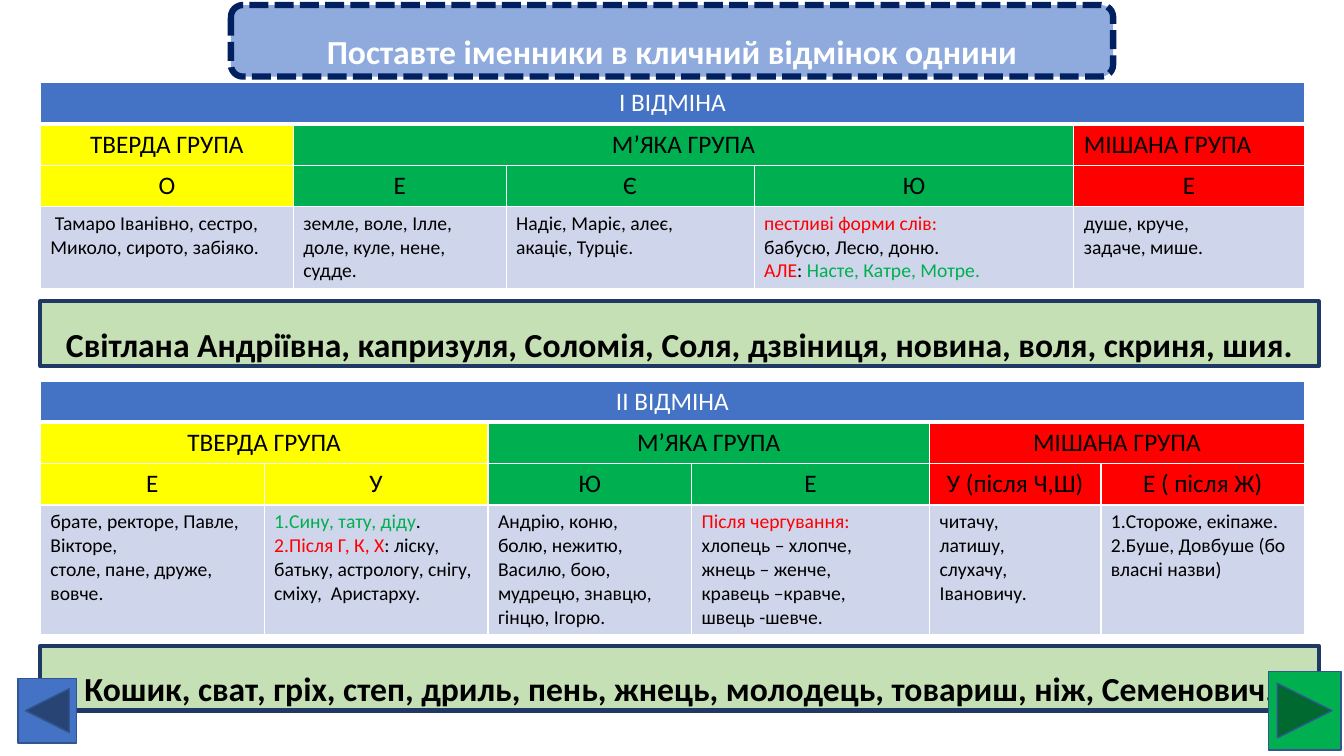
from dataclasses import dataclass

import lxml.etree
import pptx
import pptx.dml.color
import pptx.enum.dml
import pptx.enum.shapes
import pptx.enum.text
import pptx.oxml.ns
import pptx.util

Inches = pptx.util.Inches
Pt = pptx.util.Pt
SHAPE = pptx.enum.shapes.MSO_SHAPE
ALIGN = pptx.enum.text.PP_ALIGN
ANCHOR = pptx.enum.text.MSO_ANCHOR
DASH = pptx.enum.dml.MSO_LINE


@dataclass(frozen=True)
class Theme:
    font: str = "Calibri"
    title: int = 24
    heading: int = 18
    body: int = 14
    white: str = "FFFFFF"
    black: str = "000000"
    blue: str = "4472C4"
    yellow: str = "FFFF00"
    green: str = "00B050"
    red: str = "FF0000"
    pale: str = "CFD5EA"
    mint: str = "C5E0B4"
    sky: str = "8FAADC"
    dark_navy: str = "002060"
    navy: str = "203864"
    button_line: str = "325491"


T = Theme()


@dataclass(frozen=True)
class Run:
    text: str
    color: str = T.black


@dataclass(frozen=True)
class Para:
    runs: tuple[Run, ...]
    numbered: bool = False


@dataclass(frozen=True)
class Head:
    text: str
    fill: str
    span: int = 1
    align: ALIGN = ALIGN.CENTER


@dataclass(frozen=True)
class Declension:
    top: float
    widths: tuple[float, ...]
    heads: tuple[tuple[Head, ...], ...]
    examples: tuple[tuple[Para, ...], ...]
    examples_height: float


@dataclass(frozen=True)
class Box:
    kind: SHAPE
    at: tuple[float, float, float, float]
    fill: str
    line: str
    width: float
    text: str = ""
    color: str = T.black
    dash: DASH | None = None


def lines(*texts: str, numbered: bool = False) -> tuple[Para, ...]:
    return tuple(Para((Run(text),), numbered) for text in texts)


def rgb(value: str) -> pptx.dml.color.RGBColor:
    return pptx.dml.color.RGBColor.from_string(value)


def add_text(p, text: str, *, size: int, color: str = T.black, bold: bool = False) -> None:
    r = p.add_run()
    r.text = text
    r.font.name = T.font
    r.font.size = Pt(size)
    r.font.bold = bold
    r.font.color.rgb = rgb(color)


def number(p) -> None:
    """Number the paragraph with no hanging indent."""
    p_pr = p._p.get_or_add_pPr()
    p_pr.set("marL", "0")
    p_pr.set("indent", "0")
    mark = lxml.etree.SubElement(p_pr, pptx.oxml.ns.qn("a:buAutoNum"))
    mark.set("type", "arabicPeriod")


def style_cell(cell, fill: str, bottom: float = 1) -> None:
    """Give the cell white borders, then its fill, in schema order."""
    tc_pr = cell._tc.get_or_add_tcPr()
    for side, width in (("L", 1), ("R", 1), ("T", 1), ("B", bottom)):
        ln = lxml.etree.SubElement(tc_pr, pptx.oxml.ns.qn(f"a:ln{side}"), w=str(Pt(width)))
        solid = lxml.etree.SubElement(ln, pptx.oxml.ns.qn("a:solidFill"))
        lxml.etree.SubElement(solid, pptx.oxml.ns.qn("a:srgbClr"), val=T.white)
    cell.fill.solid()
    cell.fill.fore_color.rgb = rgb(fill)


def add_head_row(table, row: int, heads: tuple[Head, ...]) -> None:
    title = row == 0
    col = 0
    for head in heads:
        for i in range(col, col + head.span):
            style_cell(table.cell(row, i), head.fill, 3 if title else 1)
        cell = table.cell(row, col)
        if head.span > 1:
            cell.merge(table.cell(row, col + head.span - 1))
        p = cell.text_frame.paragraphs[0]
        p.alignment = head.align
        add_text(p, head.text, size=T.heading, color=T.white if title else T.black)
        col += head.span


def add_examples(cell, paras: tuple[Para, ...]) -> None:
    style_cell(cell, T.pale)
    tf = cell.text_frame
    for i, para in enumerate(paras):
        p = tf.add_paragraph() if i else tf.paragraphs[0]
        if para.numbered:
            number(p)
        for run in para.runs:
            add_text(p, run.text, size=T.body, color=run.color)


def add_declension(slide, d: Declension) -> None:
    heights = [0.41] * len(d.heads) + [d.examples_height]
    table = slide.shapes.add_table(
        len(heights), len(d.widths), Inches(0.4), Inches(d.top),
        Inches(sum(d.widths)), Inches(sum(heights))).table
    table.first_row = table.horz_banding = False
    for column, width in zip(table.columns, d.widths):
        column.width = Inches(width)
    for row, height in zip(table.rows, heights):
        row.height = Inches(height)
    for i, heads in enumerate(d.heads):
        add_head_row(table, i, heads)
    for col, paras in enumerate(d.examples):
        add_examples(table.cell(len(d.heads), col), paras)


def add_box(slide, box: Box) -> None:
    sp = slide.shapes.add_shape(box.kind, *map(Inches, box.at))
    sp.shadow.inherit = False
    sp.fill.solid()
    sp.fill.fore_color.rgb = rgb(box.fill)
    sp.line.color.rgb = rgb(box.line)
    sp.line.width = Pt(box.width)
    if box.dash:
        sp.line.dash_style = box.dash
    if box.text:
        tf = sp.text_frame
        tf.word_wrap = True
        tf.auto_size = pptx.enum.text.MSO_AUTO_SIZE.SHAPE_TO_FIT_TEXT
        tf.vertical_anchor = ANCHOR.MIDDLE
        p = tf.paragraphs[0]
        p.alignment = ALIGN.CENTER
        p.line_spacing = 1.5
        add_text(p, box.text, size=T.title, color=box.color, bold=True)


def word_bar(top: float, text: str) -> Box:
    return Box(SHAPE.RECTANGLE, (0.4, top, 12.68, 0.64), T.mint, T.navy, 3, text)


FIRST = Declension(
    0.82, (2.51, 2.11, 2.46, 3.17, 2.29),
    ((Head("І ВІДМІНА", T.blue, 5),),
     (Head("ТВЕРДА ГРУПА", T.yellow), Head("М’ЯКА ГРУПА", T.green, 3),
      Head("МІШАНА ГРУПА", T.red, align=ALIGN.LEFT)),
     (Head("О", T.yellow), Head("Е", T.green), Head("Є", T.green),
      Head("Ю", T.green), Head("Е", T.red))),
    (lines(" Тамаро Іванівно, сестро, Миколо, сирото, забіяко."),
     lines("земле, воле, Ілле, доле, куле, нене,", "судде."),
     lines("Надіє, Маріє, алеє,", "акаціє, Турціє."),
     (Para((Run("пестливі форми слів:", T.red),)),
      *lines("бабусю, Лесю, доню."),
      Para((Run("АЛЕ", T.red), Run(": "), Run("Насте, Катре, Мотре.", T.green)))),
     lines("душе, круче,", "задаче, мише.")),
    0.79)

SECOND = Declension(
    3.78, (2.22, 2.22, 2.02, 2.36, 1.7, 2.02),
    ((Head("ІІ ВІДМІНА", T.blue, 6),),
     (Head("ТВЕРДА ГРУПА", T.yellow, 2), Head("М’ЯКА ГРУПА", T.green, 2),
      Head("МІШАНА ГРУПА", T.red, 2)),
     (Head("Е", T.yellow), Head("У", T.yellow), Head("Ю", T.green), Head("Е", T.green),
      Head("У (після Ч,Ш)", T.red), Head("Е ( після Ж)", T.red))),
    (lines("брате, ректоре, Павле, Вікторе,", "столе, пане, друже, вовче."),
     (Para((Run("Сину, тату, діду", T.green), Run(".")), True),
      Para((Run("Після Г, К, Х", T.red),
            Run(": ліску, батьку, астрологу, снігу, сміху,  Аристарху.")), True)),
     lines("Андрію, коню,", "болю, нежитю,", "Василю, бою,", "мудрецю, знавцю, гінцю, Ігорю."),
     (Para((Run("Після чергування:", T.red),)),
      *lines("хлопець – хлопче,", "жнець – женче,", "кравець –кравче,", "швець -шевче.")),
     lines("читачу,", "латишу,", "слухачу,", "Івановичу."),
     lines("Стороже, екіпаже.", "Буше, Довбуше (бо власні назви)", numbered=True)),
    1.25)

BOXES = (
    Box(SHAPE.ROUNDED_RECTANGLE, (2.29, 0.05, 8.75, 0.71), T.sky, T.dark_navy, 4.5,
        "Поставте іменники в кличний відмінок однини", T.white, DASH.SQUARE_DOT),
    word_bar(2.99, "Світлана Андріївна, капризуля, Соломія, Соля, дзвіниця, новина, воля, скриня, шия."),
    word_bar(6.41, "Кошик, сват, гріх, степ, дриль, пень, жнець, молодець, товариш, ніж, Семенович."),
    Box(SHAPE.ACTION_BUTTON_FORWARD_OR_NEXT, (12.58, 6.66, 0.72, 0.78), T.green, T.button_line, 1),
    Box(SHAPE.ACTION_BUTTON_BACK_OR_PREVIOUS, (0.18, 6.73, 0.58, 0.64), T.blue, T.button_line, 1),
)


def main() -> None:
    prs = pptx.Presentation()
    prs.slide_width, prs.slide_height = Inches(13.33), Inches(7.5)
    slide = prs.slides.add_slide(prs.slide_layouts[6])
    for declension in (FIRST, SECOND):
        add_declension(slide, declension)
    for box in BOXES:
        add_box(slide, box)
    prs.save("out.pptx")


if __name__ == "__main__":
    main()
